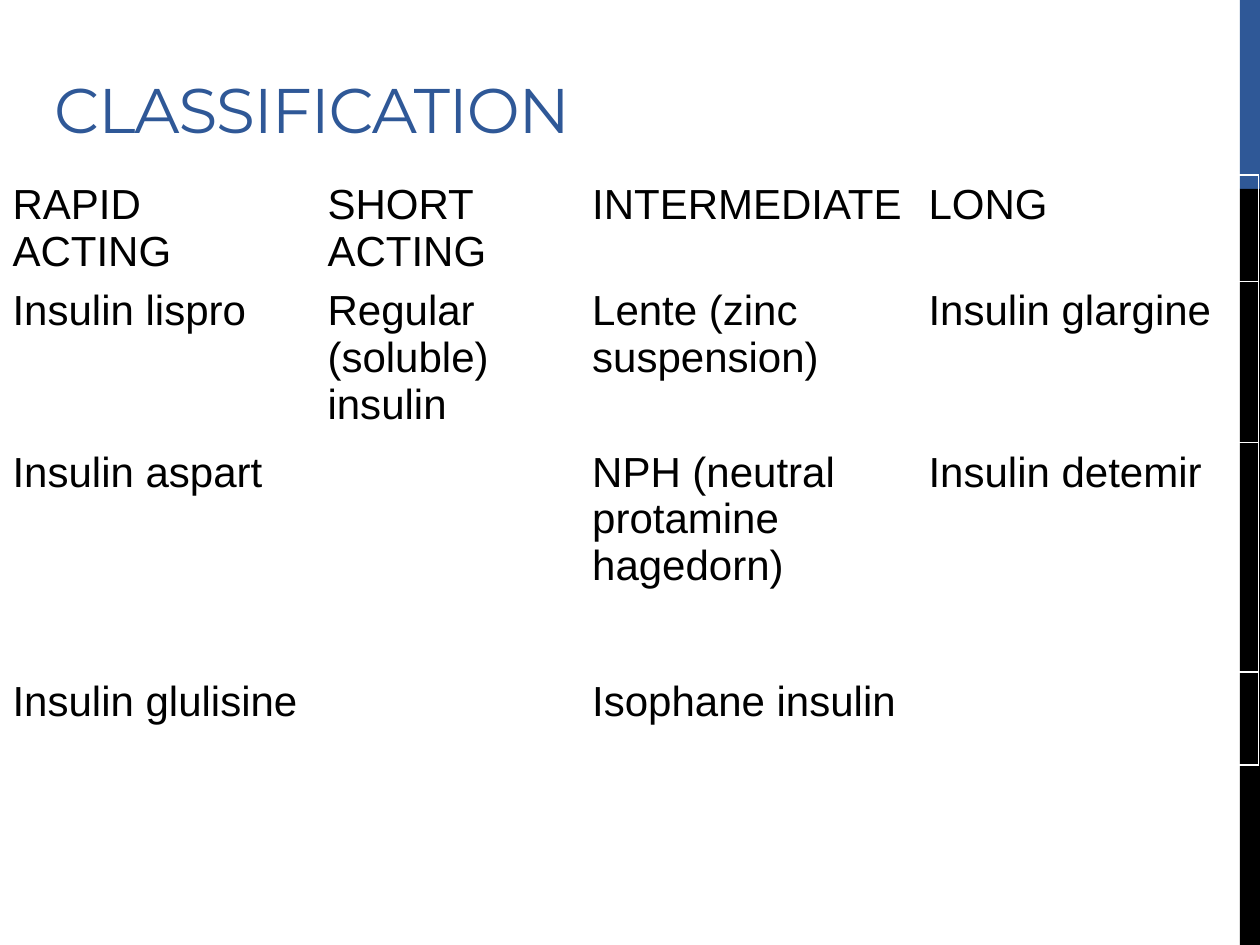
from dataclasses import dataclass

from pptx import Presentation
from pptx.dml.color import RGBColor
from pptx.enum.shapes import MSO_SHAPE
from pptx.enum.text import MSO_ANCHOR, MSO_AUTO_SIZE, PP_ALIGN
from pptx.util import Inches, Pt

HEADING = "CLASSIFICATION"
INSULINS = [
    ("RAPID ACTING", "SHORT ACTING", "INTERMEDIATE", "LONG"),
    ("Insulin lispro", "Regular (soluble) insulin", "Lente (zinc suspension)", "Insulin glargine"),
    ("Insulin aspart", "", "NPH (neutral protamine hagedorn)", "Insulin detemir"),
    ("Insulin glulisine", "", "Isophane insulin", ""),
]
COLUMN_WIDTHS = (2.5, 2.1, 2.67, 2.72)
ROW_HEIGHTS = (0.74, 1.28, 1.82, 0.74)

SLIDE_WIDTH, SLIDE_HEIGHT = 10, 7.5
STRIP_WIDTH = 0.16
ACCENT_SHARE = 0.2
TABLE_TOP = 1.39


@dataclass(frozen=True)
class Theme:
    accent: RGBColor = RGBColor(0x2F, 0x58, 0x97)
    ink: RGBColor = RGBColor(0, 0, 0)
    heading_font: str = "Montserrat"
    body_font: str = "Arial"
    heading_size: int = 36
    body_size: int = 24


THEME = Theme()


def write(frame, text, *, font, size, color, spacing=None):
    """Fill the frame with one left-aligned paragraph; spacing is in points."""
    paragraph = frame.paragraphs[0]
    paragraph.alignment = PP_ALIGN.LEFT
    run = paragraph.add_run()
    run.text = text
    run.font.name = font
    run.font.size = Pt(size)
    run.font.color.rgb = color
    if spacing is not None:
        run.font._element.set("spc", str(round(spacing * 100)))


def add_strip(slide, top, height, color):
    strip = slide.shapes.add_shape(
        MSO_SHAPE.RECTANGLE, Inches(SLIDE_WIDTH - STRIP_WIDTH), Inches(top),
        Inches(STRIP_WIDTH), Inches(height))
    strip.shadow.inherit = False
    strip.fill.solid()
    strip.fill.fore_color.rgb = color
    strip.line.fill.background()


def place_heading(slide):
    heading = slide.shapes.title
    heading.left, heading.top = Inches(0.33), Inches(0.17)
    heading.width, heading.height = Inches(6.33), Inches(1.04)
    frame = heading.text_frame
    frame.auto_size = MSO_AUTO_SIZE.NONE
    frame.vertical_anchor = MSO_ANCHOR.BOTTOM
    write(frame, HEADING, font=THEME.heading_font, size=THEME.heading_size,
          color=THEME.accent, spacing=-0.6)


def add_insulin_table(slide):
    table = slide.shapes.add_table(
        len(INSULINS), len(COLUMN_WIDTHS), 0, Inches(TABLE_TOP),
        Inches(sum(COLUMN_WIDTHS)), Inches(sum(ROW_HEIGHTS))).table
    table.first_row = table.horz_banding = False
    for column, width in zip(table.columns, COLUMN_WIDTHS):
        column.width = Inches(width)
    for row, height, entries in zip(table.rows, ROW_HEIGHTS, INSULINS):
        row.height = Inches(height)
        for cell, entry in zip(row.cells, entries):
            cell.fill.background()
            if entry:
                write(cell.text_frame, entry, font=THEME.body_font,
                      size=THEME.body_size, color=THEME.ink)


def main():
    deck = Presentation()
    deck.slide_width, deck.slide_height = Inches(SLIDE_WIDTH), Inches(SLIDE_HEIGHT)
    slide = deck.slides.add_slide(deck.slide_layouts[5])
    accent_height = SLIDE_HEIGHT * ACCENT_SHARE
    add_strip(slide, 0, accent_height, THEME.accent)
    add_strip(slide, accent_height, SLIDE_HEIGHT - accent_height, THEME.ink)
    place_heading(slide)
    add_insulin_table(slide)
    deck.save("out.pptx")


if __name__ == "__main__":
    main()
